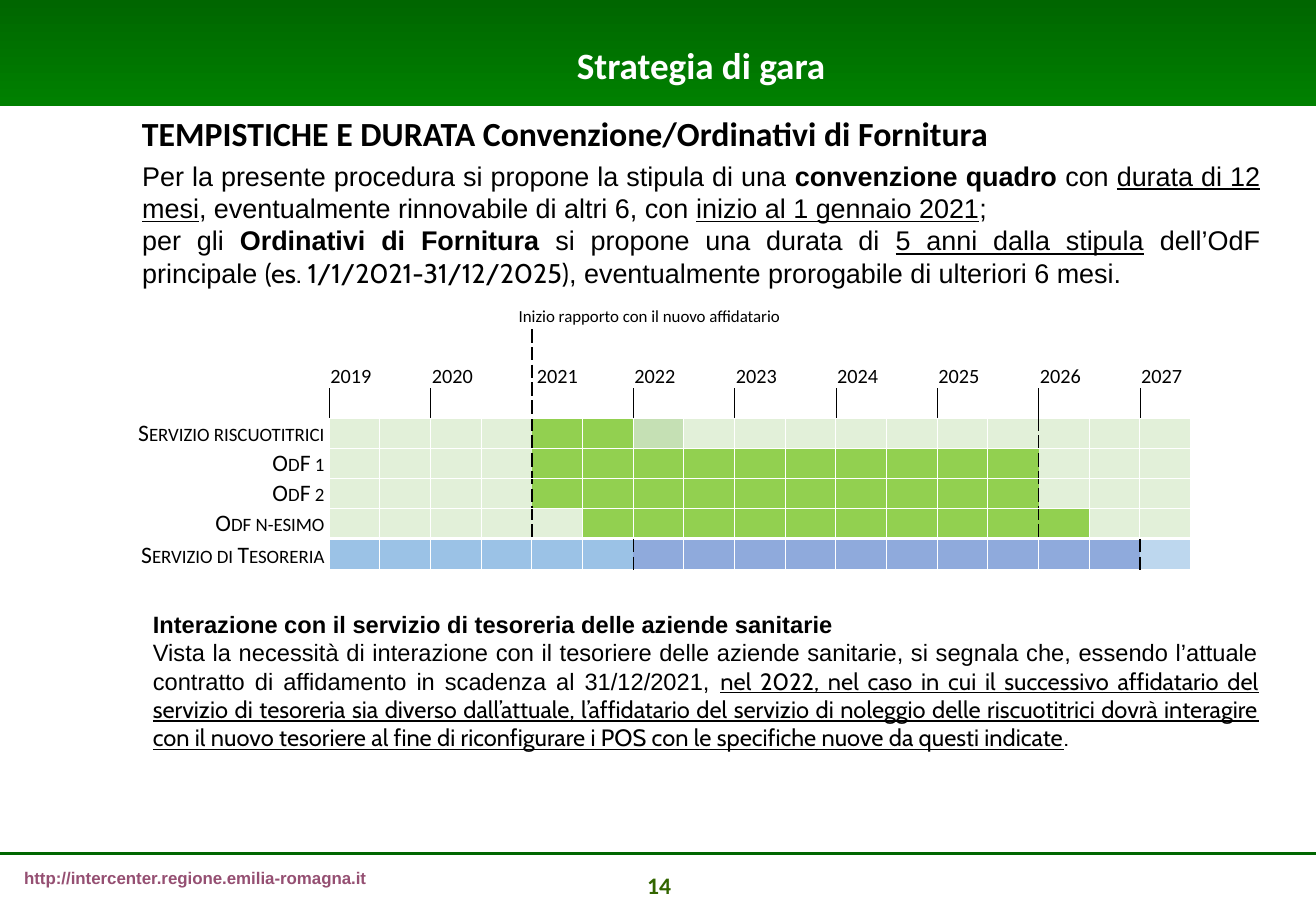
from lxml import etree
from pptx import Presentation
from pptx.dml.color import RGBColor
from pptx.enum.shapes import MSO_CONNECTOR as CONN, MSO_SHAPE as SHAPE
from pptx.enum.text import MSO_ANCHOR as ANCHOR, MSO_AUTO_SIZE as AUTO, PP_ALIGN as ALIGN
from pptx.oxml.ns import qn
from pptx.util import Inches, Pt

# Content: a paragraph is a list of (text, format) runs
TITLE = "Strategia di gara"
HEADING = "TEMPISTICHE E DURATA Convenzione/Ordinativi di Fornitura"
START_LABEL = "Inizio rapporto con il nuovo affidatario"
URL = "http://intercenter.regione.emilia-romagna.it"
PAGE = "14"
BOLD, UNDER, CABIN = {"bold": True}, {"underline": True}, {"font": "Cabin"}
DURATION = [
    [("Per la presente procedura si propone la stipula di una ", {}),
     ("convenzione quadro ", BOLD), ("con ", {}), ("durata di 12 mesi", UNDER),
     (", eventualmente rinnovabile di altri 6, con ", {}),
     ("inizio al 1 gennaio 2021", UNDER), (";", {})],
    [("per gli ", {}), ("Ordinativi di Fornitura", BOLD),
     (" si propone una durata di ", {}), ("5 anni dalla stipula", UNDER),
     (" dell’OdF principale ", {}), ("(es. 1/1/2021-31/12/2025)", CABIN),
     (", eventualmente prorogabile di ulteriori 6 mesi.", {})],
]
TREASURY = [
    [("Interazione con il servizio di tesoreria delle aziende sanitarie", BOLD)],
    [("Vista la necessità di interazione con il tesoriere delle aziende sanitarie, "
      "si segnala che, essendo l’attuale contratto di affidamento in scadenza al "
      "31/12/2021, ", {}),
     ("nel 2022, nel caso in cui il successivo affidatario del servizio di tesoreria "
      "sia diverso dall’attuale, l’affidatario del servizio di noleggio delle "
      "riscuotitrici dovrà interagire con il nuovo tesoriere al fine di riconfigurare "
      "i POS con le specifiche nuove da questi indicate", {**CABIN, **UNDER}),
     (".", CABIN)],
]
YEARS = range(2019, 2028)
START_YEAR = 2021
HALF_YEARS = 17
# Each bar: label and (colour, number of half-years) spans
SERVICES = [
    ("Servizio riscuotitrici", [("idle", 4), ("active", 2), ("renewal", 1), ("idle", 10)]),
    ("OdF 1", [("idle", 4), ("active", 10), ("idle", 3)]),
    ("OdF 2", [("idle", 4), ("active", 10), ("idle", 3)]),
    ("Odf n-esimo", [("idle", 5), ("active", 10), ("idle", 2)]),
]
TREASURY_BAR = ("Servizio di Tesoreria",
                [("treasury_now", 6), ("treasury_next", 10), ("treasury_later", 1)])
COLORS = {
    "black": "000000", "white": "FFFFFF", "band_top": "006600", "band_bottom": "008000",
    "page": "336600", "url": "954F72", "idle": "E2F0D9", "active": "92D050",
    "renewal": "C5E0B4", "treasury_now": "9BC2E6", "treasury_next": "8FAADC",
    "treasury_later": "BDD7EE",
}
# Cell lines: colour, points, dash
DASH = ("black", 1, "dash")
TICK = ("black", 0.25, "solid")
GRID = ("white", 0.75, "solid")

TABLE_X, TABLE_W, LABEL_W, ROW_H = 0.62, 9.18, 2.09, 1.71 / 7
HEADER_ROWS = 3  # start marker, years, ticks


def rgb(name):
    return RGBColor.from_string(COLORS[name])


def write(p, text, size=16, font="Arial", color="black", bold=False,
          underline=False, small=False, align=None):
    """Add one formatted run to a paragraph."""
    r = p.add_run()
    r.text = text
    f = r.font
    f.size, f.name, f.bold, f.underline = Pt(size), font, bold, underline
    f.color.rgb = rgb(color)
    if small:
        r._r.get_or_add_rPr().set("cap", "small")
    if align is not None:
        p.alignment = align


def fill_frame(tf, paragraphs, wrap=True, **fmt):
    tf.word_wrap, tf.auto_size, tf.vertical_anchor = wrap, AUTO.NONE, ANCHOR.TOP
    for i, runs in enumerate(paragraphs):
        p = tf.paragraphs[0] if i == 0 else tf.add_paragraph()
        p.space_before = Pt(0)
        for text, extra in runs:
            write(p, text, **{**fmt, **extra})


def place(sp, x, y, w, h):
    sp.left, sp.top, sp.width, sp.height = (Inches(v) for v in (x, y, w, h))


def add_text(x, y, w, h, paragraphs, **fmt):
    sp = s.shapes.add_textbox(*(Inches(v) for v in (x, y, w, h)))
    fill_frame(sp.text_frame, paragraphs, **fmt)


def format_cell(cell, lines, fill=None):
    """Set the left, right, top and bottom lines, then the fill."""
    cell.margin_left = cell.margin_right = cell.margin_top = Inches(0.01)
    cell.margin_bottom = 0
    tcPr = cell._tc.get_or_add_tcPr()
    for side, line in zip("LRTB", lines):
        ln = etree.SubElement(tcPr, qn(f"a:ln{side}"))
        if line is None:
            etree.SubElement(ln, qn("a:noFill"))
            continue
        color, width, dash = line
        ln.set("w", str(Pt(width)))
        solid = etree.SubElement(ln, qn("a:solidFill"))
        etree.SubElement(solid, qn("a:srgbClr"), val=COLORS[color])
        etree.SubElement(ln, qn("a:prstDash"), val=dash)
    if fill:
        cell.fill.solid()
        cell.fill.fore_color.rgb = rgb(fill)
    else:
        cell.fill.background()


def add_timeline(y, bars, header_rows, dash_from):
    """Draw bars; dash_from maps a half-year boundary to its first dashed row."""
    rows = header_rows + len(bars)
    frame = s.shapes.add_table(rows, HALF_YEARS + 1, Inches(TABLE_X), Inches(y),
                               Inches(TABLE_W), Inches(ROW_H * rows))
    table = frame.table
    table.first_row = table.horz_banding = False
    for c, col in enumerate(table.columns):
        col.width = Inches(LABEL_W if c == 0 else (TABLE_W - LABEL_W) / HALF_YEARS)

    def boundary(row, after):
        if after in dash_from and row >= dash_from[after]:
            return DASH
        if row >= header_rows:
            return GRID
        is_tick = row == header_rows - 1 and after % 2 == 0 and 0 <= after < HALF_YEARS
        return TICK if is_tick else None

    for row in range(rows):
        in_bar = row >= header_rows
        fills = [None] * (HALF_YEARS + 1)
        if in_bar:
            label, spans = bars[row - header_rows]
            fills[1:] = [color for color, n in spans for _ in range(n)]
        for c, fill in enumerate(fills):
            cell = table.cell(row, c)
            top = GRID if c and in_bar else None
            bottom = GRID if c and row >= header_rows - 1 else None
            format_cell(cell, (boundary(row, c - 1), boundary(row, c), top, bottom), fill)
            p = cell.text_frame.paragraphs[0]
            if in_bar and c == 0:
                cell.vertical_anchor, cell.margin_right = ANCHOR.MIDDLE, Inches(0.04)
                write(p, label, size=14, font="Calibri", small=True, align=ALIGN.RIGHT)
            elif header_rows and row == 1 and c % 2:
                year = YEARS[c // 2]
                cell.vertical_anchor = ANCHOR.BOTTOM
                if year == START_YEAR:
                    cell.margin_left = Inches(0.04)
                write(p, str(year), size=12, font="Calibri")
            else:
                etree.SubElement(p._p, qn("a:endParaRPr"), sz="800")
        table.rows[row].height = Inches(ROW_H)


prs = Presentation()
prs.slide_width, prs.slide_height = Inches(10.83), Inches(7.5)
s = prs.slides.add_slide(prs.slide_layouts[1])
title, body = s.placeholders

# Header band, sent behind the title
band = s.shapes.add_shape(SHAPE.RECTANGLE, 0, 0, prs.slide_width, Inches(0.87))
band.shadow.inherit = False
band.fill.gradient()
band.fill.gradient_angle = 270
for stop, name, pos in zip(band.fill.gradient_stops, ("band_top", "band_bottom"), (0, 1)):
    stop.color.rgb, stop.position = rgb(name), pos
band.line.fill.background()
s.shapes._spTree.insert(2, band._element)

# Title and main text
place(title, 1.07, 0.3, 9.4, 0.39)
fill_frame(title.text_frame, [[(TITLE, BOLD)]], size=22, font="Calibri",
           color="white", align=ALIGN.CENTER)
add_text(1.07, 0.88, 8.57, 0.44, [[(HEADING, BOLD)]], size=20, font="Calibri")
place(body, 1.07, 1.26, 9.4, 1.18)
fill_frame(body.text_frame, DURATION, align=ALIGN.JUSTIFY)
for p in body.text_frame.paragraphs:
    pPr = p._p.get_or_add_pPr()
    pPr.set("marL", "0")
    pPr.set("indent", "0")
    etree.SubElement(pPr, qn("a:buNone"))

# Timeline
add_text(4.17, 2.47, 2.39, 0.27, [[(START_LABEL, {})]], wrap=False, size=10, font="Calibri")
add_timeline(2.71, SERVICES, HEADER_ROWS, {4: 0, 14: HEADER_ROWS})
add_timeline(4.44, [TREASURY_BAR], 0, {6: 0, 16: 0})

# Treasury note
add_text(1.16, 4.97, 9.3, 1.28, TREASURY, size=14, align=ALIGN.JUSTIFY)

# Footer
rule = s.shapes.add_connector(CONN.STRAIGHT, 0, Inches(7.03), prs.slide_width, Inches(7.03))
rule.line.color.rgb, rule.line.width = rgb("band_top"), Pt(1.75)
etree.SubElement(rule._element.spPr, qn("a:effectLst"))
add_text(0.1, 7.09, 3.81, 0.27, [[(URL, BOLD)]], size=10, color="url")
add_text(4.3, 7.12, 2.25, 0.27, [[(PAGE, BOLD)]], size=14, font="Calibri",
         color="page", align=ALIGN.CENTER)

prs.save("out.pptx")
